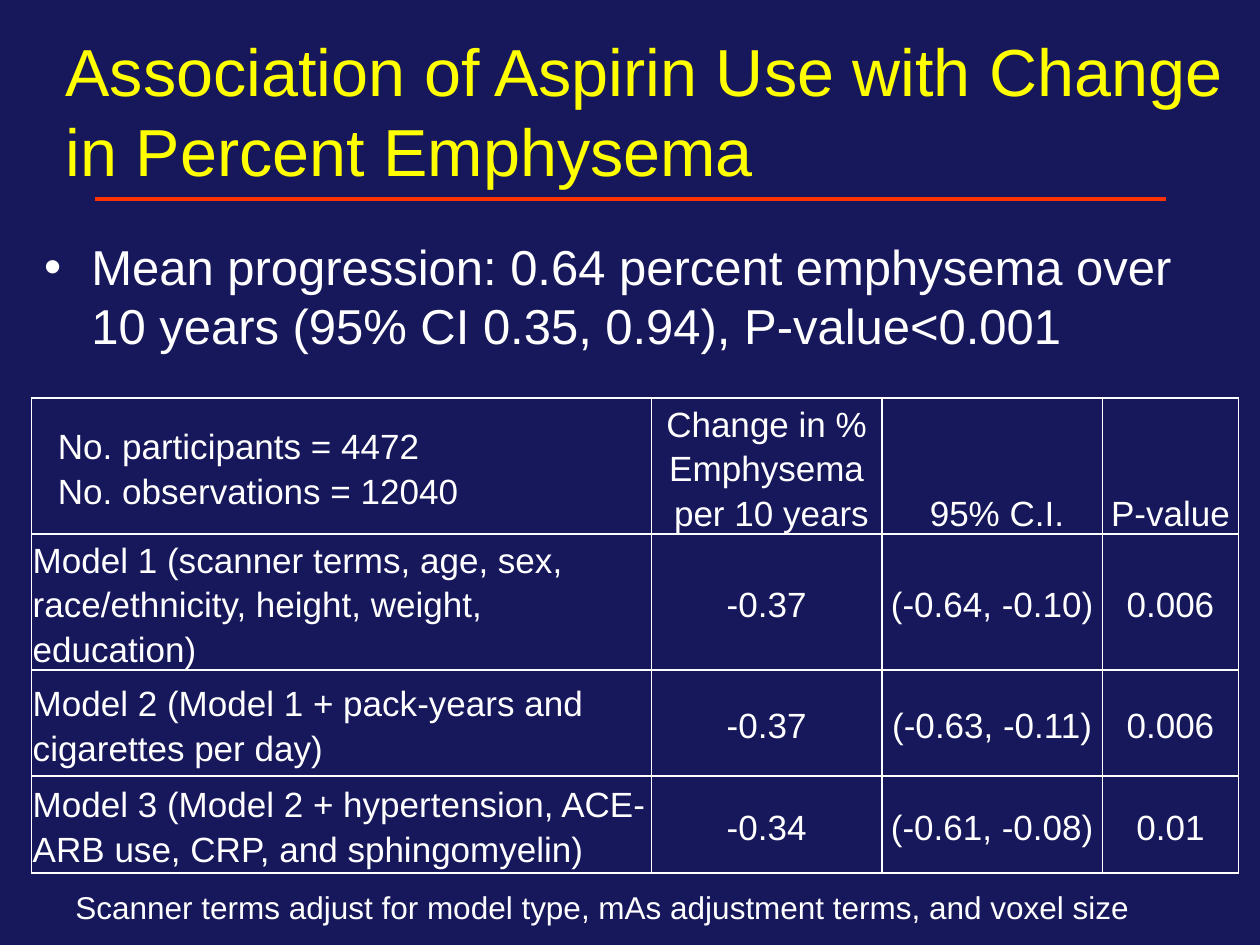
"""Build the slide on aspirin use and change in percent emphysema."""
from pptx import Presentation
from pptx.dml.color import RGBColor
from pptx.enum.shapes import MSO_CONNECTOR
from pptx.enum.text import MSO_ANCHOR as Anchor, MSO_AUTO_SIZE as AutoSize, PP_ALIGN as Align
from pptx.oxml import parse_xml
from pptx.oxml.ns import nsdecls
from pptx.util import Inches, Pt

COLORS = {"background": "17175C", "title": "FFFF00", "text": "FFFFFF", "rule": "FF3300"}
ROWS = [
    ["No. participants = 4472\nNo. observations = 12040",
     "Change in % Emphysema\n per 10 years", " 95% C.I.", "P-value"],
    ["Model 1 (scanner terms, age, sex, race/ethnicity, height, weight, education)",
     "-0.37", "(-0.64, -0.10)", "0.006"],
    ["Model 2 (Model 1 + pack-years and cigarettes per day)",
     "-0.37", "(-0.63, -0.11)", "0.006"],
    ["Model 3 (Model 2 + hypertension, ACE-ARB use, CRP, and sphingomyelin)",
     "-0.34", "(-0.61, -0.08)", "0.01"],
]
COLUMN_WIDTHS = [4.92, 1.83, 1.75, 1.08]
ROW_HEIGHTS = [1.08, 0.84, 0.84, 0.77]


def place(shape, left, top, width, height):
    shape.left, shape.top = Inches(left), Inches(top)
    shape.width, shape.height = Inches(width), Inches(height)


def add_text(paragraph, text, size, color="text"):
    run = paragraph.add_run()
    run.text = text
    run.font.name = "Arial"
    run.font.size = Pt(size)
    run.font.color.rgb = RGBColor.from_string(COLORS[color])


prs = Presentation()
prs.slide_width, prs.slide_height = Inches(10), Inches(7.5)
slide = prs.slides.add_slide(prs.slide_layouts[1])
slide.background.fill.solid()
slide.background.fill.fore_color.rgb = RGBColor.from_string(COLORS["background"])

rule = slide.shapes.add_connector(
    MSO_CONNECTOR.STRAIGHT, Inches(0.75), Inches(1.58), Inches(9.25), Inches(1.58))
rule.line.color.rgb = RGBColor.from_string(COLORS["rule"])
rule.line.width = Pt(2)
rule._element.spPr.append(parse_xml(f"<a:effectLst {nsdecls('a')}/>"))

title = slide.shapes.title
place(title, 0.42, 0.25, 9.58, 1.25)
title.text_frame.auto_size = AutoSize.NONE
title.text_frame.vertical_anchor = Anchor.MIDDLE
heading = title.text_frame.paragraphs[0]
heading.alignment = Align.LEFT
add_text(heading, "Association of Aspirin Use with Change in Percent Emphysema", 38, "title")

progression = slide.placeholders[1]
place(progression, 0.25, 1.83, 9.25, 1.08)
progression.text_frame.auto_size = AutoSize.NONE
add_text(progression.text_frame.paragraphs[0],
         "Mean progression: 0.64 percent emphysema over 10 years "
         "(95% CI 0.35, 0.94), P-value<0.001", 28)

models = slide.shapes.add_table(
    len(ROWS), len(COLUMN_WIDTHS), Inches(0.25), Inches(3.16),
    Inches(sum(COLUMN_WIDTHS)), Inches(sum(ROW_HEIGHTS))).table
models.first_row = models.horz_banding = False
for column, width in zip(models.columns, COLUMN_WIDTHS):
    column.width = Inches(width)
for row, height in zip(models.rows, ROW_HEIGHTS):
    row.height = Inches(height)

for r, entries in enumerate(ROWS):
    for c, entry in enumerate(entries):
        cell = models.cell(r, c)
        cell.margin_left = cell.margin_right = cell.margin_top = Inches(0.01)
        cell.margin_bottom = 0
        cell.vertical_anchor = Anchor.BOTTOM if r == 0 and c > 0 else Anchor.MIDDLE
        cell.fill.background()
        for i, line in enumerate(entry.split("\n")):
            frame = cell.text_frame
            paragraph = frame.add_paragraph() if i else frame.paragraphs[0]
            paragraph.line_spacing = 1.15
            paragraph.alignment = Align.CENTER if c else Align.LEFT
            if r == 0 and c == 0:
                paragraph.level = 1
                paragraph._p.get_or_add_pPr().set("marL", str(Inches(0.2)))
            add_text(paragraph, line, 20)
        for i, side in enumerate(["lnL", "lnR", "lnT", "lnB"]):
            cell._tc.tcPr.insert(i, parse_xml(
                f'<a:{side} {nsdecls("a")} w="{Pt(1)}"><a:solidFill>'
                f'<a:srgbClr val="{COLORS["text"]}"/></a:solidFill></a:{side}>'))

footnote = slide.shapes.add_textbox(Inches(0.5), Inches(7), Inches(9.08), Inches(0.4))
footnote.text_frame.word_wrap = True
footnote.text_frame.auto_size = AutoSize.SHAPE_TO_FIT_TEXT
add_text(footnote.text_frame.paragraphs[0],
         "Scanner terms adjust for model type, mAs adjustment terms, and voxel size", 18)

prs.save("out.pptx")
